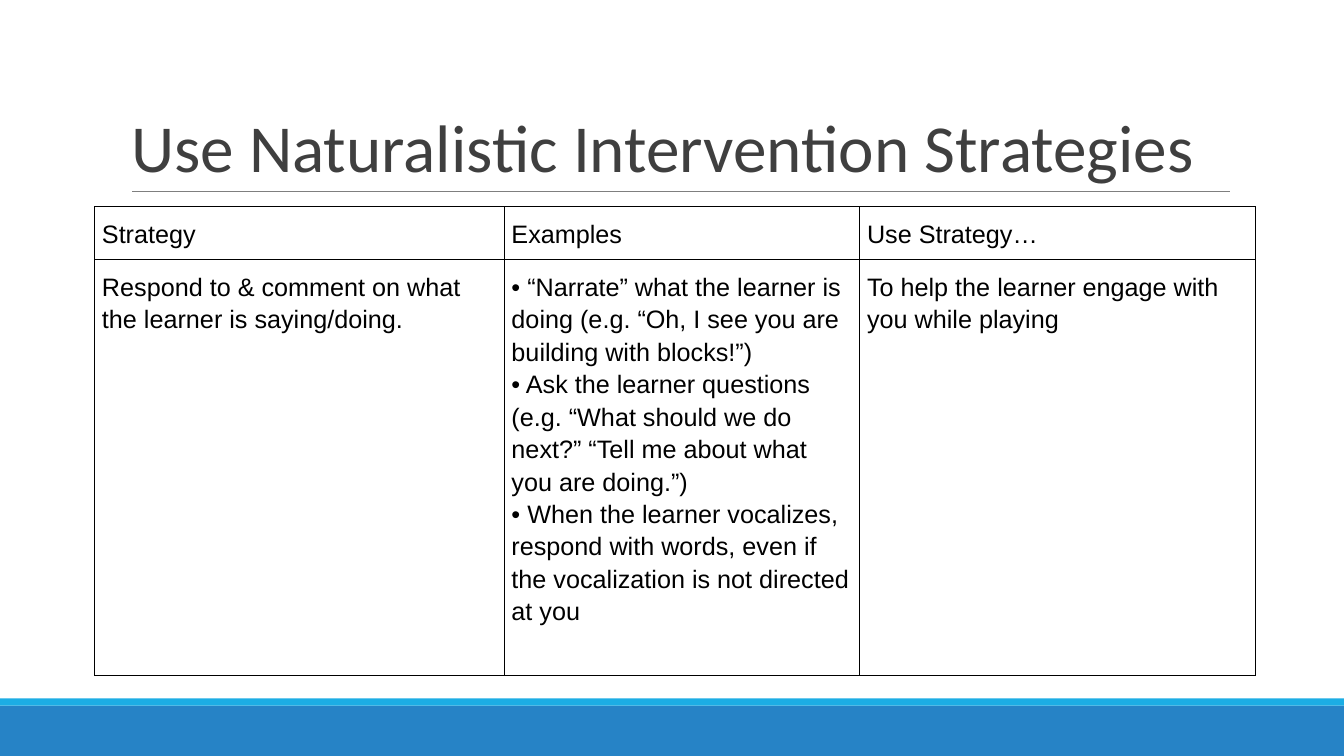
from dataclasses import dataclass

from lxml.etree import SubElement
from pptx import Presentation
from pptx.dml.color import RGBColor as RGB
from pptx.enum.shapes import MSO_CONNECTOR as CONNECTOR, MSO_SHAPE as SHAPE
from pptx.enum.text import MSO_ANCHOR as ANCHOR, MSO_AUTO_SIZE as AUTO_SIZE, PP_ALIGN as ALIGN
from pptx.oxml.ns import qn
from pptx.util import Cm, Pt


@dataclass(frozen=True)
class Theme:
    footer: RGB = RGB(0x26, 0x83, 0xC6)
    accent: RGB = RGB(0x1C, 0xAD, 0xE4)
    rule: RGB = RGB(0x7F, 0x7F, 0x7F)
    title: RGB = RGB(0x3F, 0x3F, 0x3F)
    body: RGB = RGB(0, 0, 0)
    border: str = "000000"
    title_font: str = "Calibri"
    body_font: str = "Arial"
    title_size: Pt = Pt(48)
    body_size: Pt = Pt(18)
    line_width: Pt = Pt(0.75)


THEME = Theme()
SLIDE_WIDTH, SLIDE_HEIGHT = Cm(33.87), Cm(19.05)
COLUMN_WIDTHS = Cm(10.32), Cm(8.96), Cm(9.98)
ROW_HEIGHTS = Cm(1.33), Cm(10.49)
STRATEGIES = [
    ["Strategy", "Examples", "Use Strategy…"],
    [
        "Respond to & comment on what the learner is saying/doing.",
        "• “Narrate” what the learner is doing (e.g. “Oh, I see you are building with blocks!”)\n"
        "• Ask the learner questions (e.g. “What should we do next?” "
        "“Tell me about what you are doing.”)\n"
        "• When the learner vocalizes, respond with words, even if the vocalization "
        "is not directed at you",
        "To help the learner engage with you while playing",
    ],
]


def format_text(frame, font_name, size, color, line_spacing):
    for paragraph in frame.paragraphs:
        paragraph.alignment = ALIGN.LEFT
        paragraph.line_spacing = line_spacing
        for run in paragraph.runs:
            run.font.name = font_name
            run.font.size = size
            run.font.color.rgb = color


def add_band(slide, top, height, color):
    band = slide.shapes.add_shape(SHAPE.RECTANGLE, 0, top, SLIDE_WIDTH, height)
    band.shadow.inherit = False
    band.fill.solid()
    band.fill.fore_color.rgb = color
    band.line.fill.background()


def add_rule(slide, left, right, y):
    rule = slide.shapes.add_connector(CONNECTOR.STRAIGHT, left, y, right, y)
    rule.line.color.rgb = THEME.rule
    rule.line.width = THEME.line_width
    SubElement(rule._element.spPr, qn("a:effectLst"))


def set_title(slide, text):
    title = slide.shapes.title
    title.left, title.top, title.width, title.height = Cm(3.05), Cm(0.79), Cm(27.94), Cm(4.04)
    frame = title.text_frame
    frame.text = text
    frame.auto_size = AUTO_SIZE.NONE
    frame.vertical_anchor = ANCHOR.BOTTOM
    format_text(frame, THEME.title_font, THEME.title_size, THEME.title, 0.85)


def add_borders(cell):
    properties = cell._tc.get_or_add_tcPr()
    for side in ("lnL", "lnR", "lnT", "lnB"):
        border = SubElement(properties, qn(f"a:{side}"), w=str(THEME.line_width))
        fill = SubElement(border, qn("a:solidFill"))
        SubElement(fill, qn("a:srgbClr"), val=THEME.border)


def fill_cell(cell, text):
    cell.text_frame.text = text
    cell.margin_left = cell.margin_right = Cm(0.18)
    cell.margin_top = cell.margin_bottom = Cm(0.25)
    cell.vertical_anchor = ANCHOR.TOP
    format_text(cell.text_frame, THEME.body_font, THEME.body_size, THEME.body, 1.15)
    add_borders(cell)
    cell.fill.background()


def add_strategy_table(slide, left, top):
    table = slide.shapes.add_table(
        len(ROW_HEIGHTS), len(COLUMN_WIDTHS), left, top, sum(COLUMN_WIDTHS), sum(ROW_HEIGHTS)
    ).table
    table.first_row = table.horz_banding = False
    for column, width in zip(table.columns, COLUMN_WIDTHS):
        column.width = width
    for row, height, texts in zip(table.rows, ROW_HEIGHTS, STRATEGIES):
        row.height = height
        for cell, text in zip(row.cells, texts):
            fill_cell(cell, text)


def main():
    deck = Presentation()
    deck.slide_width, deck.slide_height = SLIDE_WIDTH, SLIDE_HEIGHT
    slide = deck.slides.add_slide(deck.slide_layouts.get_by_name("Title Only"))
    add_band(slide, Cm(17.78), Cm(1.27), THEME.footer)
    add_band(slide, Cm(17.6), Cm(0.18), THEME.accent)
    add_rule(slide, Cm(3.33), Cm(31), Cm(4.82))
    set_title(slide, "Use Naturalistic Intervention Strategies")
    add_strategy_table(slide, Cm(2.39), Cm(5.21))
    deck.save("out.pptx")


if __name__ == "__main__":
    main()
